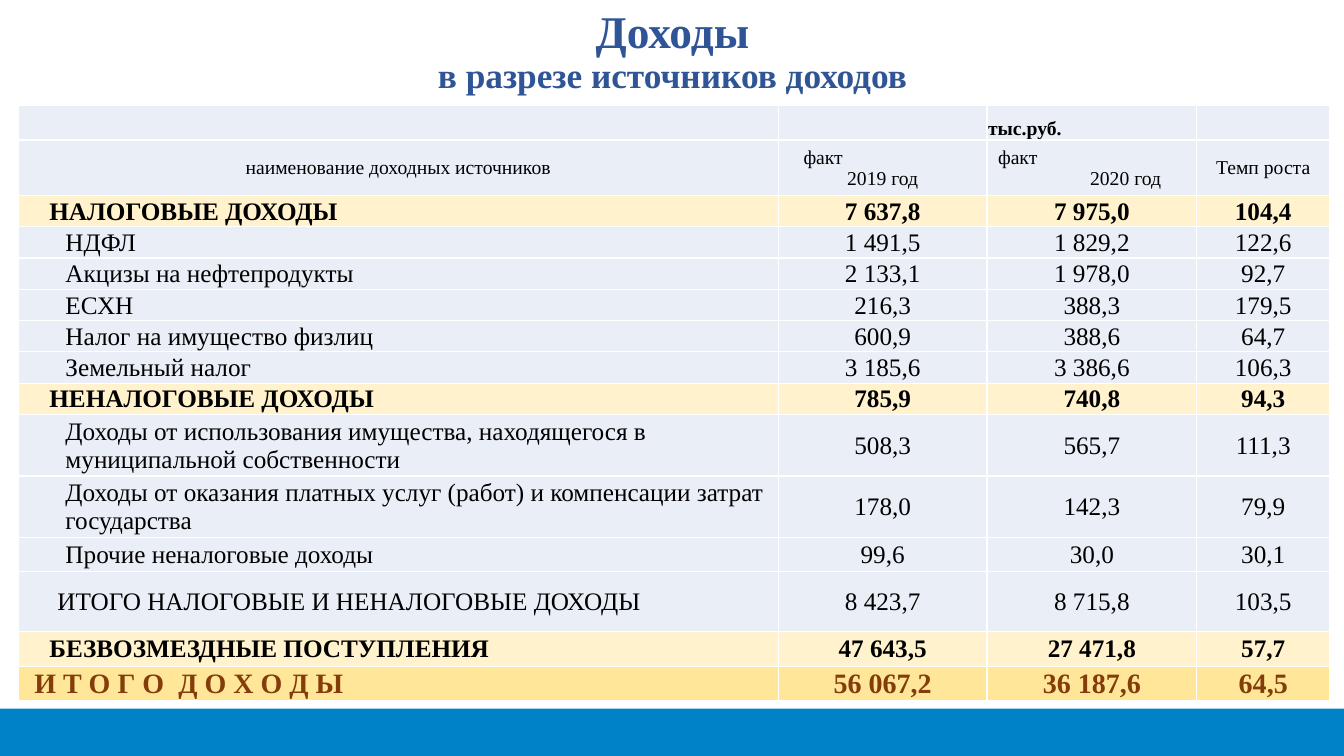
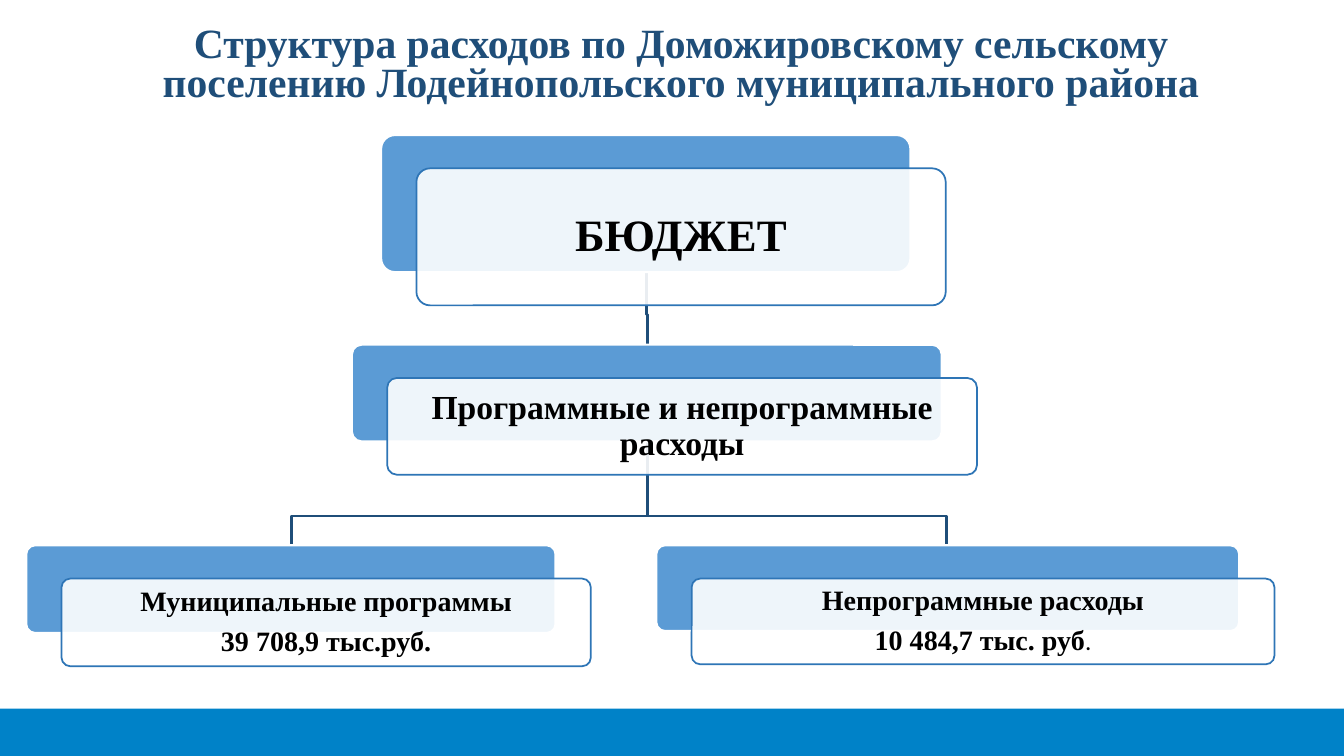
"""Build two budget slides: an income table and an expense structure chart."""
from dataclasses import dataclass
from typing import NamedTuple

from lxml import etree
from pptx import Presentation, util as u
from pptx.dml.color import RGBColor
from pptx.enum import shapes, text
from pptx.oxml import ns

PX = 9144
SERIF = "Times New Roman"
BAND, TITLE_INCOME, TITLE_EXPENSE = "0082C8", "2F5597", "1F4E79"
BLUE, OUTLINE, WHITE, BLACK = "5B9BD5", "2E75B6", "FFFFFF", "000000"
PALE, CREAM, GOLD, BROWN = "EAEFF7", "FFF2CC", "FFE699", "843C0B"
CENTER, LEFT = text.PP_ALIGN.CENTER, text.PP_ALIGN.LEFT
MIDDLE = text.MSO_ANCHOR.MIDDLE


class Box(NamedTuple):
    """Position and size in px."""
    left: int
    top: int
    width: int
    height: int

    def emu(self) -> list[int]:
        """Return the four lengths in EMU."""
        return [value * PX for value in self]


@dataclass(frozen=True)
class RowStyle:
    """Look of one table row."""
    fill: str
    indent: int
    size: int = 18
    bold: bool = False
    color: str = BLACK


@dataclass(frozen=True)
class IncomeRow:
    """One income source with its figures."""
    name: str
    values: tuple[str, str, str]
    height: int
    style: RowStyle


@dataclass(frozen=True)
class Node:
    """One card of the expense structure."""
    box: Box
    lines: tuple[str, ...]
    size: int
    inset: int
    tail: str = ""


SECTION = RowStyle(CREAM, 31, bold=True)
ITEM = RowStyle(PALE, 47)
SUBTOTAL = RowStyle(PALE, 39)
TOTAL = RowStyle(GOLD, 16, 20, True, BROWN)

COLUMNS = (754, 207, 208, 132)
HEADER_HEIGHTS = (34, 55)
INCOME = (
    IncomeRow("НАЛОГОВЫЕ ДОХОДЫ", ("7 637,8", "7 975,0", "104,4"), 31, SECTION),
    IncomeRow("НДФЛ", ("1 491,5", "1 829,2", "122,6"), 30, ITEM),
    IncomeRow("Акцизы на нефтепродукты", ("2 133,1", "1 978,0", "92,7"), 31, ITEM),
    IncomeRow("ЕСХН", ("216,3", "388,3", "179,5"), 30, ITEM),
    IncomeRow("Налог на имущество физлиц", ("600,9", "388,6", "64,7"), 31, ITEM),
    IncomeRow("Земельный налог", ("3 185,6", "3 386,6", "106,3"), 31, ITEM),
    IncomeRow("НЕНАЛОГОВЫЕ ДОХОДЫ", ("785,9", "740,8", "94,3"), 31, SECTION),
    IncomeRow("Доходы от использования имущества, находящегося в муниципальной собственности",
              ("508,3", "565,7", "111,3"), 56, ITEM),
    IncomeRow("Доходы от оказания платных услуг (работ) и компенсации затрат государства",
              ("178,0", "142,3", "79,9"), 59, ITEM),
    IncomeRow("Прочие неналоговые доходы", ("99,6", "30,0", "30,1"), 34, ITEM),
    IncomeRow("ИТОГО НАЛОГОВЫЕ И НЕНАЛОГОВЫЕ ДОХОДЫ", ("8 423,7", "8 715,8", "103,5"), 59, SUBTOTAL),
    IncomeRow("БЕЗВОЗМЕЗДНЫЕ ПОСТУПЛЕНИЯ", ("47 643,5", "27 471,8", "57,7"), 35, SECTION),
    IncomeRow("И Т О Г О  Д О Х О Д Ы", ("56 067,2", "36 187,6", "64,5"), 31, TOTAL),
)

NODES = (
    Node(Box(378, 134, 525, 136), ("БЮДЖЕТ",), 32, 13),
    Node(Box(349, 342, 585, 96), ("Программные и непрограммные расходы",), 24, 10),
    Node(Box(26, 541, 525, 87), ("Муниципальные программы", "39 708,9 тыс.руб."), 20, 8),
    Node(Box(651, 541, 578, 85), ("Непрограммные расходы", "10 484,7 тыс. руб"), 20, 8, "."),
)
CARD_SHIFT = (35, 33)
LINKS = (
    ((642, 437), (642, 512), (939, 512), (939, 541)),
    ((642, 437), (642, 512), (289, 512), (289, 541)),
    ((641, 270), (641, 312), (642, 312), (642, 342)),
)


def paint(fill, color: str, alpha: int = 100) -> None:
    """Set a solid colour, with optional opacity in percent."""
    fill.solid()
    fill.fore_color.rgb = RGBColor.from_string(color)
    if alpha < 100:
        for node in fill._xPr.iter(ns.qn("a:srgbClr")):
            etree.SubElement(node, ns.qn("a:alpha")).set("val", str(alpha * 1000))


def write(paragraph, words: str, *, size: float, color: str = BLACK, bold: bool = False,
          font: str = SERIF, align=CENTER, spacing: float = 1.0, after: float = 0,
          indent: int = 0) -> None:
    """Append formatted text to a paragraph."""
    paragraph.alignment = align
    paragraph.line_spacing = spacing
    paragraph.space_after = u.Pt(after)
    if indent:
        paragraph._p.get_or_add_pPr().set("marL", str(indent * PX))
    run = paragraph.add_run()
    run.text = words
    run.font.name, run.font.size, run.font.bold = font, u.Pt(size), bold
    paint(run.font.fill, color)


def next_paragraph(frame, index: int):
    """Return the first paragraph, or add one after it."""
    return frame.add_paragraph() if index else frame.paragraphs[0]


def add_box(slide, kind, box: Box, fill: str, line: str = "", width: float = 0, alpha: int = 100):
    """Add a flat preset shape."""
    shape = slide.shapes.add_shape(kind, *box.emu())
    shape.shadow.inherit = False
    paint(shape.fill, fill, alpha)
    if line:
        paint(shape.line.fill, line)
        shape.line.width = u.Pt(width)
    else:
        shape.line.fill.background()
    return shape


def add_slide(presentation, box: Box, titles, color: str, spacing: float):
    """Add a slide with the bottom band and its title."""
    slide = presentation.slides.add_slide(presentation.slide_layouts[6])
    add_box(slide, shapes.MSO_SHAPE.RECTANGLE, Box(0, 703, 1334, 54), BAND)
    frame = slide.shapes.add_textbox(*box.emu()).text_frame
    frame.word_wrap = True
    frame.vertical_anchor = MIDDLE
    for index, (words, size) in enumerate(titles):
        write(next_paragraph(frame, index), words, size=size, color=color, bold=True, spacing=spacing)
    return slide


def format_cell(cell, fill: str, indent: int = 1) -> None:
    """Set fill, margins, anchor and white borders of a cell."""
    cell.margin_left, cell.margin_top = indent * PX, PX
    cell.margin_right, cell.margin_bottom = PX, 0
    cell.vertical_anchor = MIDDLE
    paint(cell.fill, fill)
    properties = cell._tc.get_or_add_tcPr()
    for index, side in enumerate("LRTB"):
        border = etree.Element(ns.qn(f"a:ln{side}"), w=str(u.Pt(1)))
        solid = etree.SubElement(border, ns.qn("a:solidFill"))
        etree.SubElement(solid, ns.qn("a:srgbClr")).set("val", WHITE)
        properties.insert(index, border)


def fill_header(table) -> None:
    """Fill the unit row and the column headings."""
    for row in range(len(HEADER_HEIGHTS)):
        for column in range(len(COLUMNS)):
            format_cell(table.cell(row, column), PALE)
    unit = table.cell(0, 2)
    unit.vertical_anchor = text.MSO_ANCHOR.BOTTOM
    write(unit.text_frame.paragraphs[0], "тыс.руб.", size=14, bold=True, align=LEFT)
    for column, words in ((0, "наименование доходных источников"), (3, "Темп роста")):
        write(table.cell(1, column).text_frame.paragraphs[0], words, size=14)
    for column, year, fact_indent, year_indent in ((1, "2019 год", 24, 0), (2, "2020 год", 10, 67)):
        frame = table.cell(1, column).text_frame
        write(frame.paragraphs[0], "факт", size=14, align=LEFT, indent=fact_indent)
        write(frame.add_paragraph(), year, size=14, indent=year_indent)


def add_income_table(slide) -> None:
    """Add the table of income sources."""
    heights = HEADER_HEIGHTS + tuple(row.height for row in INCOME)
    box = Box(18, 105, sum(COLUMNS), sum(heights))
    table = slide.shapes.add_table(len(heights), len(COLUMNS), *box.emu()).table
    table.first_row = table.horz_banding = False
    for column, width in zip(table.columns, COLUMNS):
        column.width = width * PX
    for row, height in zip(table.rows, heights):
        row.height = height * PX
    fill_header(table)
    for index, income in enumerate(INCOME, len(HEADER_HEIGHTS)):
        style = income.style
        for column, words in enumerate((income.name, *income.values)):
            cell = table.cell(index, column)
            format_cell(cell, style.fill, 1 if column else style.indent)
            write(cell.text_frame.paragraphs[0], words, size=style.size, bold=style.bold,
                  color=style.color, align=CENTER if column else LEFT)


def add_link(slide, points) -> None:
    """Add a bent line through the points."""
    start, *rest = [(x * PX, y * PX) for x, y in points]
    builder = slide.shapes.build_freeform(*start)
    builder.add_line_segments(rest, close=False)
    shape = builder.convert_to_shape()
    shape.shadow.inherit = False
    shape.fill.background()
    paint(shape.line.fill, TITLE_EXPENSE)
    shape.line.width = u.Pt(2)


def add_node(slide, node: Node) -> None:
    """Add a blue back plate and a translucent card with text."""
    shift_x, shift_y = CARD_SHIFT
    front = node.box._replace(left=node.box.left + shift_x, top=node.box.top + shift_y)
    rounded = shapes.MSO_SHAPE.ROUNDED_RECTANGLE
    plate = add_box(slide, rounded, node.box, BLUE, WHITE, 1.5)
    card = add_box(slide, rounded, front, WHITE, OUTLINE, 1.25, alpha=90)
    plate.adjustments[0] = card.adjustments[0] = 0.1
    frame = card.text_frame
    frame.word_wrap = True
    frame.vertical_anchor = MIDDLE
    frame.margin_left = frame.margin_right = node.inset * PX
    frame.margin_top = frame.margin_bottom = node.inset * PX
    layout = {"spacing": 0.9, "after": round(node.size * 0.35)}
    for index, words in enumerate(node.lines):
        write(next_paragraph(frame, index), words, size=node.size, bold=True, **layout)
    if node.tail:
        write(frame.paragraphs[-1], node.tail, size=18, font="Calibri", **layout)


def main() -> None:
    """Build and save the presentation."""
    presentation = Presentation()
    presentation.slide_width, presentation.slide_height = u.Inches(13.33), u.Inches(7.5)
    income = add_slide(presentation, Box(92, 0, 1150, 105),
                       (("Доходы", 32.4), ("в разрезе источников доходов", 25.2)), TITLE_INCOME, 0.9)
    add_income_table(income)
    expense = add_slide(
        presentation, Box(118, 9, 1116, 113),
        (("Структура расходов по Доможировскому сельскому поселению "
          "Лодейнопольского муниципального района", 29.7),), TITLE_EXPENSE, 0.8)
    for points in LINKS:
        add_link(expense, points)
    for node in NODES:
        add_node(expense, node)
    presentation.save("out.pptx")


if __name__ == "__main__":
    main()
